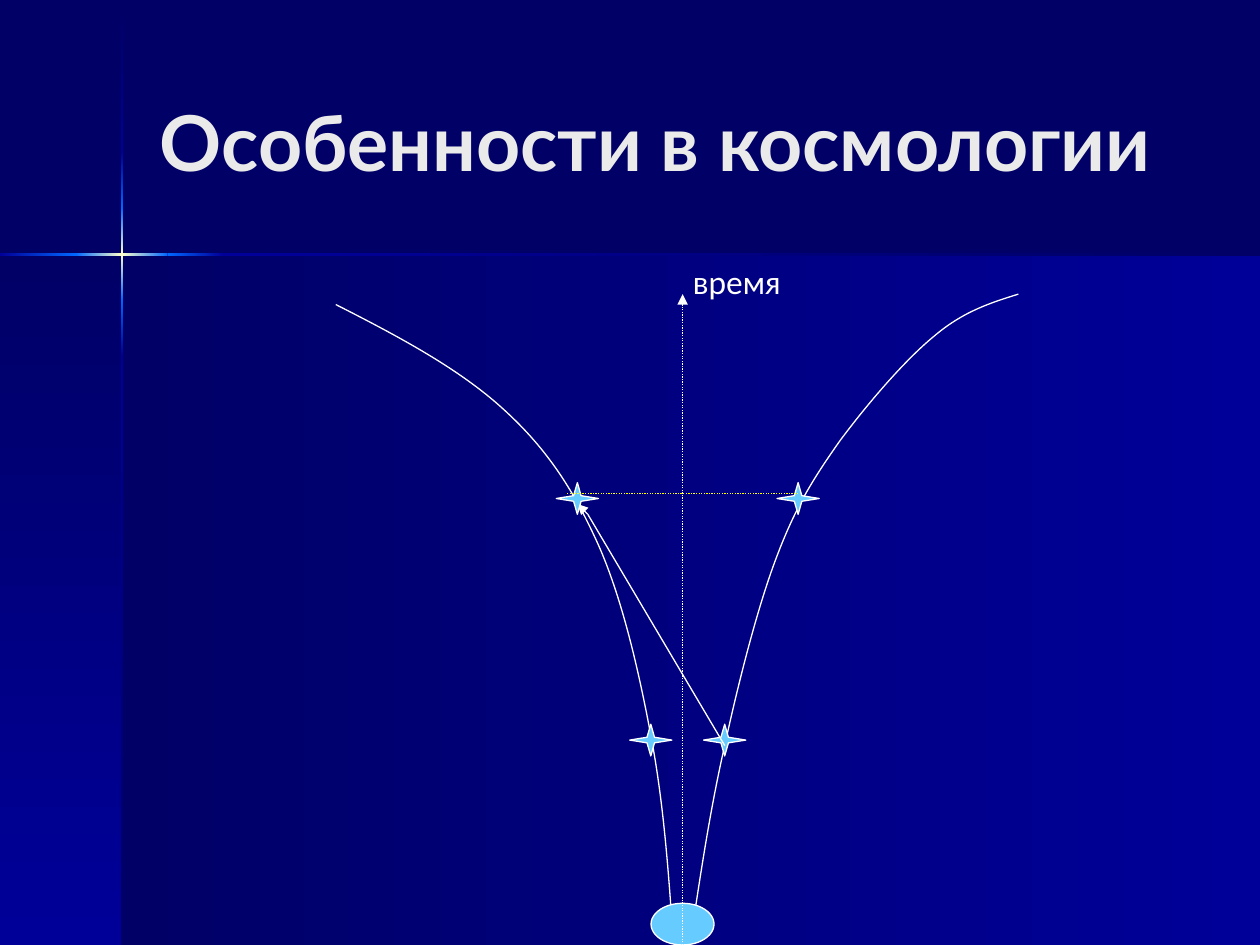
import copy
import itertools

import lxml.etree
import pptx
import pptx.dml.color
import pptx.enum.dml
import pptx.enum.shapes
import pptx.enum.text
import pptx.oxml.ns
import pptx.util

Cm, Pt, qn = pptx.util.Cm, pptx.util.Pt, pptx.oxml.ns.qn
SHAPES = pptx.enum.shapes.MSO_SHAPE
FONT = "Lato"
COLORS = {"night": "000066", "deep": "000099", "glow": "0066FF", "spark": "FFFFCC",
          "title": "EAEAEA", "white": "FFFFFF", "star": "66CCFF", "now": "FFFF00"}

TITLE = "Особенности в космологии"
TIME_LABEL = "время"
WIDTH, HEIGHT = 25.4, 19.05
CROSS_X, CROSS_Y, BEAM = 2.46, 5.13, 0.05
PANELS = [
    ((CROSS_X, CROSS_Y, WIDTH - CROSS_X, HEIGHT - CROSS_Y), 0),
    ((0, CROSS_Y, CROSS_X, HEIGHT - CROSS_Y), 270),
]
VERTICAL_CUTS = [0.03, 3.07, 4.19, 6.05, 7.16, HEIGHT]
VERTICAL_GLOWS = [("night", "deep"), ("deep", "glow"), ("glow", "spark", "glow"),
                  ("glow", "deep"), ("deep", "night")]
HORIZONTAL_CUTS = [0, 1.53, 3.38, 4.5, WIDTH]
HORIZONTAL_GLOWS = VERTICAL_GLOWS[1:]
WORLD_LINES = [
    [(6.77, 6.14), (8.03, 6.78), (9.27, 7.44), (10.16, 8.26), (11.05, 9.07),
     (11.58, 9.91), (12.07, 11), (12.55, 12.09), (12.88, 13.54), (13.12, 14.82),
     (13.36, 16.08), (13.46, 17.35), (13.55, 18.63)],
    [(13.97, 18.63), (14.15, 17.45), (14.33, 16.26), (14.61, 15.03), (14.88, 13.79),
     (15.27, 12.24), (15.66, 11.22), (16.05, 10.19), (16.41, 9.63), (16.93, 8.89),
     (17.48, 8.15), (18.24, 7.26), (18.84, 6.77), (19.43, 6.27), (19.99, 6.1),
     (20.53, 5.93)],
]
ORIGIN = (13.76, 18.63)
EARLY_STARS = [(13.12, 14.92), (14.61, 14.92)]
LATE_STARS = [(16.09, 10.05), (11.64, 10.05)]
LIGHT_RAY = [(14.61, 15.03), (11.85, 10.37), (11.64, 10.16)]
TIME_AXIS = [(13.76, HEIGHT), (13.76, 6.14), (13.76, 5.93)]
NOW = [(11.43, 9.95), (16.09, 9.95)]


def rgb(name):
    return pptx.dml.color.RGBColor.from_string(COLORS[name])


def outline(shape, color="white"):
    shape.line.color.rgb = rgb(color)
    shape.line.width = Pt(0.75)


def add_gradient(slide, box, colors, angle):
    band = slide.shapes.add_shape(SHAPES.RECTANGLE, *map(Cm, box))
    band.shadow.inherit = False
    band.line.fill.background()
    band.fill.gradient()
    band.fill.gradient_angle = angle
    stop_list = band._element.spPr.find(".//" + qn("a:gsLst"))
    for _ in colors[2:]:
        stop_list.append(copy.deepcopy(stop_list[0]))
    for index, (stop, color) in enumerate(zip(band.fill.gradient_stops, colors)):
        stop.color.rgb = rgb(color)
        stop.position = index / (len(colors) - 1)


def add_background(slide):
    slide.background.fill.solid()
    slide.background.fill.fore_color.rgb = rgb("night")
    for box, angle in PANELS:
        add_gradient(slide, box, ("night", "deep"), angle)
    for (top, bottom), colors in zip(itertools.pairwise(VERTICAL_CUTS), VERTICAL_GLOWS):
        add_gradient(slide, (CROSS_X - BEAM / 2, top, BEAM, bottom - top), colors, 270)
    for (left, right), colors in zip(itertools.pairwise(HORIZONTAL_CUTS), HORIZONTAL_GLOWS):
        add_gradient(slide, (left, CROSS_Y - BEAM / 2, right - left, BEAM), colors, 0)


def add_curve(slide, points):
    start, *rest = [(Cm(x), Cm(y)) for x, y in points]
    builder = slide.shapes.build_freeform(*start)
    builder.add_line_segments(rest, close=False)
    curve = builder.convert_to_shape()
    curve.shadow.inherit = False
    curve.fill.background()
    outline(curve)
    outline_path = curve._element.spPr.find(".//" + qn("a:path"))
    segments = outline_path.findall(qn("a:lnTo"))
    for first in range(0, len(segments), 3):
        bezier = lxml.etree.SubElement(outline_path, qn("a:cubicBezTo"))
        for segment in segments[first:first + 3]:
            bezier.append(segment[0])
            outline_path.remove(segment)


def add_body(slide, kind, center, width, height):
    x, y = center
    body = slide.shapes.add_shape(
        kind, Cm(x - width / 2), Cm(y - height / 2), Cm(width), Cm(height))
    body.shadow.inherit = False
    body.fill.solid()
    body.fill.fore_color.rgb = rgb("star")
    outline(body)
    return body


def add_stars(slide, centers):
    for center in centers:
        add_body(slide, SHAPES.STAR_4_POINT, center, 0.85, 0.64).adjustments[0] = 0.125


def add_line(slide, start, end, color="white", dotted=False, arrow=False):
    line = slide.shapes.add_connector(
        pptx.enum.shapes.MSO_CONNECTOR.STRAIGHT, *map(Cm, start + end))
    outline(line, color)
    if dotted:
        line.line.dash_style = pptx.enum.dml.MSO_LINE.ROUND_DOT
    if arrow:
        lxml.etree.SubElement(line.line._get_or_add_ln(), qn("a:tailEnd"), type="triangle")
    lxml.etree.SubElement(line._element.spPr, qn("a:effectLst"))


def add_arrow(slide, points, dotted=False):
    start, neck, tip = points
    add_line(slide, start, neck, dotted=dotted)
    add_line(slide, neck, tip, arrow=True)


def write(frame, text, size, color, bold=False):
    frame.text = text
    paragraph = frame.paragraphs[0]
    paragraph.alignment = pptx.enum.text.PP_ALIGN.LEFT
    paragraph.font.name = FONT
    paragraph.font.size = Pt(size)
    paragraph.font.bold = bold
    paragraph.font.color.rgb = rgb(color)


def add_title(slide):
    title = slide.shapes.title
    title.left, title.top, title.width, title.height = map(Cm, (2.97, 0.84, 20.96, 3.99))
    title.text_frame.vertical_anchor = pptx.enum.text.MSO_ANCHOR.MIDDLE
    title.text_frame.auto_size = pptx.enum.text.MSO_AUTO_SIZE.NONE
    write(title.text_frame, TITLE, 44, "title", bold=True)
    slide.shapes._spTree.append(title._element)


def add_time_label(slide):
    label = slide.shapes.add_textbox(*map(Cm, (13.72, 5.18, 2.29, 1.02)))
    label.text_frame.word_wrap = False
    label.text_frame.auto_size = pptx.enum.text.MSO_AUTO_SIZE.SHAPE_TO_FIT_TEXT
    write(label.text_frame, TIME_LABEL, 18, "white")


def main():
    """Build the slide on the world lines of an expanding universe."""
    deck = pptx.Presentation()
    deck.slide_width, deck.slide_height = Cm(WIDTH), Cm(HEIGHT)
    slide = deck.slides.add_slide(deck.slide_layouts[5])
    add_background(slide)
    add_title(slide)
    for points in WORLD_LINES:
        add_curve(slide, points)
    add_body(slide, SHAPES.OVAL, ORIGIN, 1.27, 0.84)
    add_stars(slide, EARLY_STARS)
    add_arrow(slide, LIGHT_RAY)
    add_stars(slide, LATE_STARS)
    add_arrow(slide, TIME_AXIS, dotted=True)
    add_time_label(slide)
    add_line(slide, *NOW, color="now", dotted=True)
    deck.save("out.pptx")


if __name__ == "__main__":
    main()
